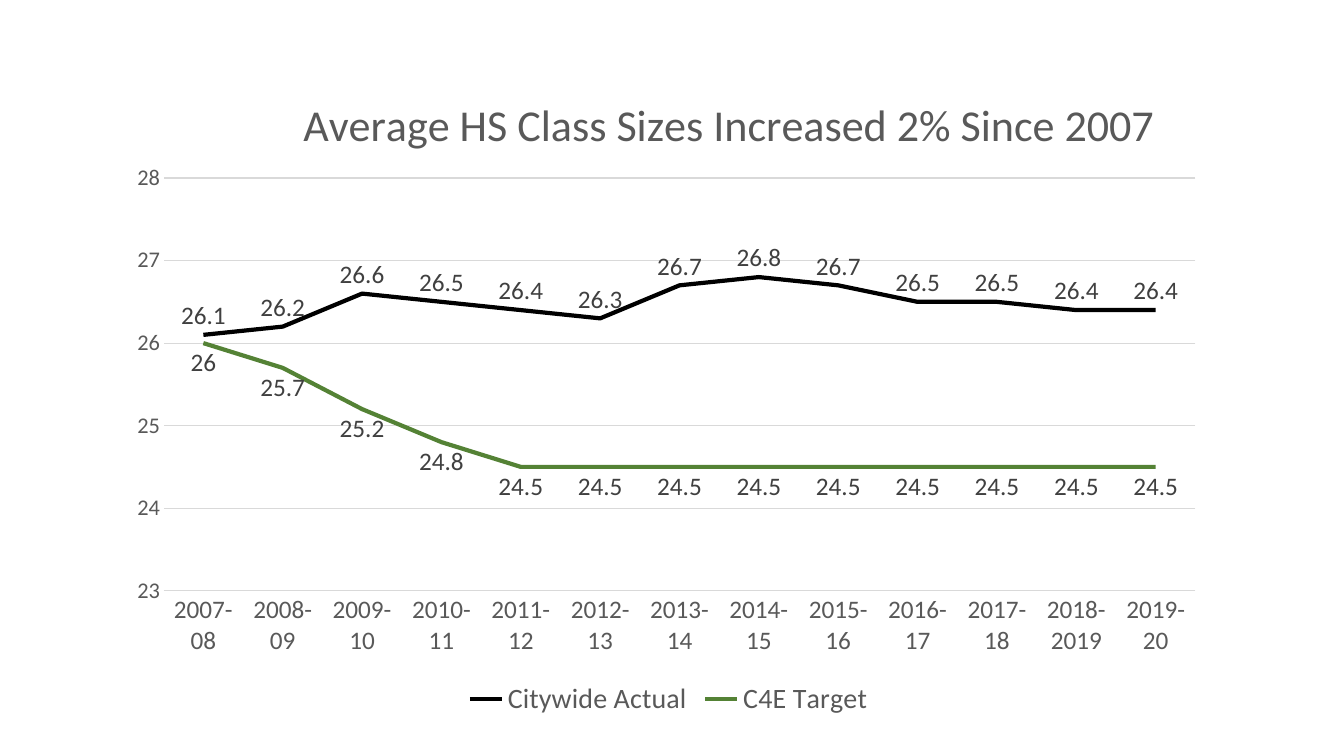
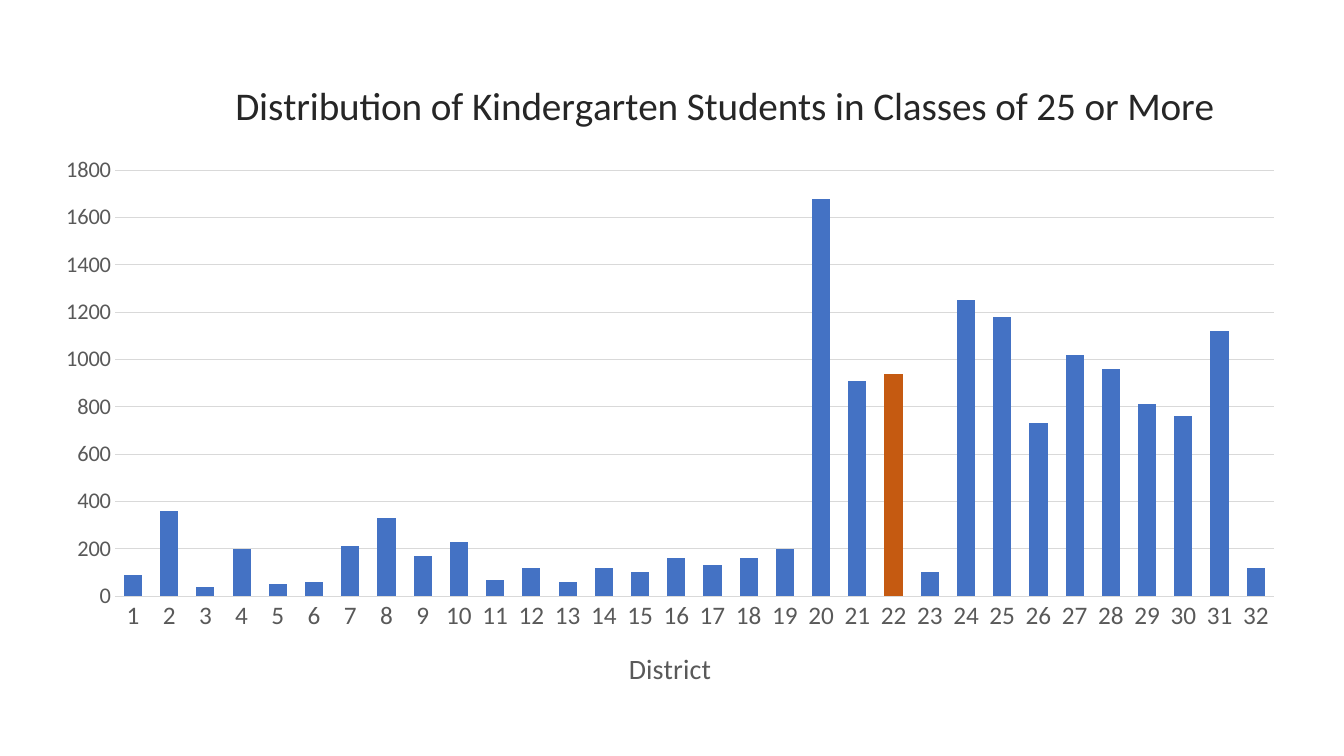
from lxml import etree
from pptx import Presentation
from pptx.chart.data import CategoryChartData
from pptx.dml.color import RGBColor
from pptx.enum.chart import (
    XL_CHART_TYPE, XL_LABEL_POSITION, XL_LEGEND_POSITION, XL_TICK_MARK)
from pptx.oxml.ns import qn
from pptx.util import Cm, Pt

LINE_CHART = XL_CHART_TYPE.LINE
COLUMN_CHART = XL_CHART_TYPE.COLUMN_CLUSTERED
ABOVE = XL_LABEL_POSITION.ABOVE
BELOW = XL_LABEL_POSITION.BELOW
BOTTOM = XL_LEGEND_POSITION.BOTTOM
NO_TICK = XL_TICK_MARK.NONE

BLACK = RGBColor(0x00, 0x00, 0x00)
INK = RGBColor(0x26, 0x26, 0x26)
LABEL_GREY = RGBColor(0x40, 0x40, 0x40)
GREY = RGBColor(0x59, 0x59, 0x59)
GRID_GREY = RGBColor(0xD9, 0xD9, 0xD9)
GREEN = RGBColor(0x54, 0x82, 0x35)
BLUE = RGBColor(0x44, 0x72, 0xC4)
ORANGE = RGBColor(0xC5, 0x5A, 0x11)

SCHOOL_YEARS = [f"{year}-{(year + 1) % 100:02d}" for year in range(2007, 2018)]
SCHOOL_YEARS += ["2018-2019", "2019-20"]
CITYWIDE_SIZES = [26.1, 26.2, 26.6, 26.5, 26.4, 26.3, 26.7,
                  26.8, 26.7, 26.5, 26.5, 26.4, 26.4]
TARGET_SIZES = [26, 25.7, 25.2, 24.8] + [24.5] * 9

DISTRICTS = [str(number) for number in range(1, 33)]
KINDERGARTEN_COUNTS = [
    90, 360, 40, 200, 50, 60, 210, 330, 170, 230, 70, 120, 60, 120, 100, 160,
    130, 160, 200, 1680, 910, 940, 100, 1250, 1180, 730, 1020, 960, 810, 760,
    1120, 120]
HIGHLIGHTED_DISTRICT = "22"


def set_layout(parent, position, **fractions):
    """Place a chart part by fractions of the chart's width and height."""
    for old_layout in parent.findall(qn("c:layout")):
        parent.remove(old_layout)
    layout = etree.Element(qn("c:layout"))
    manual = etree.SubElement(layout, qn("c:manualLayout"))
    for name, value in fractions.items():
        etree.SubElement(manual, qn(f"c:{name}")).set("val", str(value))
    parent.insert(position, layout)


class ChartDeck:
    """Holds the shared chart style and the current slide."""

    font_name = "Calibri"
    category_size = 18
    value_size = 16
    label_size = 18
    caption_size = 20

    def __init__(self):
        self.deck = Presentation()
        self.deck.slide_width = Cm(33.87)
        self.deck.slide_height = Cm(19.05)
        self.slide = None

    def add_slide(self):
        self.slide = self.deck.slides.add_slide(self.deck.slide_layouts[6])

    def style_font(self, font, size, color=GREY):
        values = {"name": self.font_name, "size": Pt(size), "bold": False}
        for name, value in values.items():
            setattr(font, name, value)
        font.color.rgb = color

    def style_line(self, line, color=GRID_GREY, width=0.75):
        line.color.rgb = color
        line.width = Pt(width)

    def write_title(self, title, text, size, color=GREY):
        para = title.text_frame.paragraphs[0]
        span = para.add_run()
        span.text = text
        self.style_font(span.font, size, color)

    def add_chart(self, kind, box, categories, series, plot_area):
        data = CategoryChartData()
        data.categories = categories
        for name, values in series.items():
            data.add_series(name, values)
        lengths = [Cm(length) for length in box]
        chart = self.slide.shapes.add_chart(kind, *lengths, data).chart
        self.style_font(chart.font, 10, BLACK)
        chart.has_legend = False
        chart.plots[0].vary_by_categories = False
        left, top, width, height = plot_area
        set_layout(chart.plots[0]._element.getparent(), 0,
                   layoutTarget="inner", xMode="edge", yMode="edge",
                   x=left, y=top, w=width, h=height)
        return chart

    def add_title(self, chart, text, size, color, left, top):
        chart.has_title = True
        title = chart.chart_title
        self.write_title(title, text, size, color)
        set_layout(title._element, 1, xMode="edge", yMode="edge", x=left, y=top)

    def style_axes(self, chart, minimum, maximum, step):
        scale = {"minimum_scale": minimum, "maximum_scale": maximum,
                 "major_unit": step, "has_major_gridlines": True}
        for name, value in scale.items():
            setattr(chart.value_axis, name, value)
        sizes = ((chart.category_axis, self.category_size),
                 (chart.value_axis, self.value_size))
        for axis, size in sizes:
            axis.major_tick_mark = axis.minor_tick_mark = NO_TICK
            self.style_font(axis.tick_labels.font, size)
        self.style_line(chart.category_axis.format.line)
        self.style_line(chart.value_axis.major_gridlines.format.line)
        chart.value_axis.format.line.fill.background()

    def add_legend(self, chart):
        chart.has_legend = True
        chart.legend.position = BOTTOM
        chart.legend.include_in_layout = False
        self.style_font(chart.legend.font, self.caption_size)

    def style_line_series(self, series, color, label_position):
        series.smooth = False
        self.style_line(series.format.line, color, 3)
        labels = series.data_labels
        labels.show_value = True
        labels.position = label_position
        self.style_font(labels.font, self.label_size, LABEL_GREY)

    def fill_bar(self, bar, color):
        bar.format.fill.solid()
        bar.format.fill.fore_color.rgb = color

    def save(self):
        self.deck.save("out.pptx")


def add_class_size_slide(deck):
    deck.add_slide()
    chart = deck.add_chart(
        LINE_CHART, (3.02, 1.68, 27.66, 16.51), SCHOOL_YEARS,
        {"Citywide Actual": CITYWIDE_SIZES, "C4E Target": TARGET_SIZES},
        plot_area=(0.04, 0.17, 0.94, 0.63))
    deck.add_title(chart, "Average HS Class Sizes Increased 2% Since 2007",
                   31.5, GREY, left=0.16, top=0.03)
    deck.style_axes(chart, 23, 28, 1)
    deck.add_legend(chart)
    styles = ((BLACK, ABOVE), (GREEN, BELOW))
    for series, (color, label_position) in zip(chart.plots[0].series, styles):
        deck.style_line_series(series, color, label_position)


def add_kindergarten_slide(deck):
    deck.add_slide()
    chart = deck.add_chart(
        COLUMN_CHART, (0.99, 1.32, 31.75, 16.51), DISTRICTS,
        {"Series 1": KINDERGARTEN_COUNTS},
        plot_area=(0.06, 0.18, 0.92, 0.65))
    deck.add_title(
        chart, "Distribution of Kindergarten Students in Classes of 25 or More",
        28, INK, left=0.15, top=0.03)
    deck.style_axes(chart, 0, 1800, 200)
    deck.write_title(chart.category_axis.axis_title, "District",
                     deck.caption_size)
    chart.plots[0].gap_width = 100
    series = chart.plots[0].series[0]
    deck.fill_bar(series, BLUE)
    deck.fill_bar(series.points[DISTRICTS.index(HIGHLIGHTED_DISTRICT)], ORANGE)


def main():
    deck = ChartDeck()
    add_class_size_slide(deck)
    add_kindergarten_slide(deck)
    deck.save()


if __name__ == "__main__":
    main()
